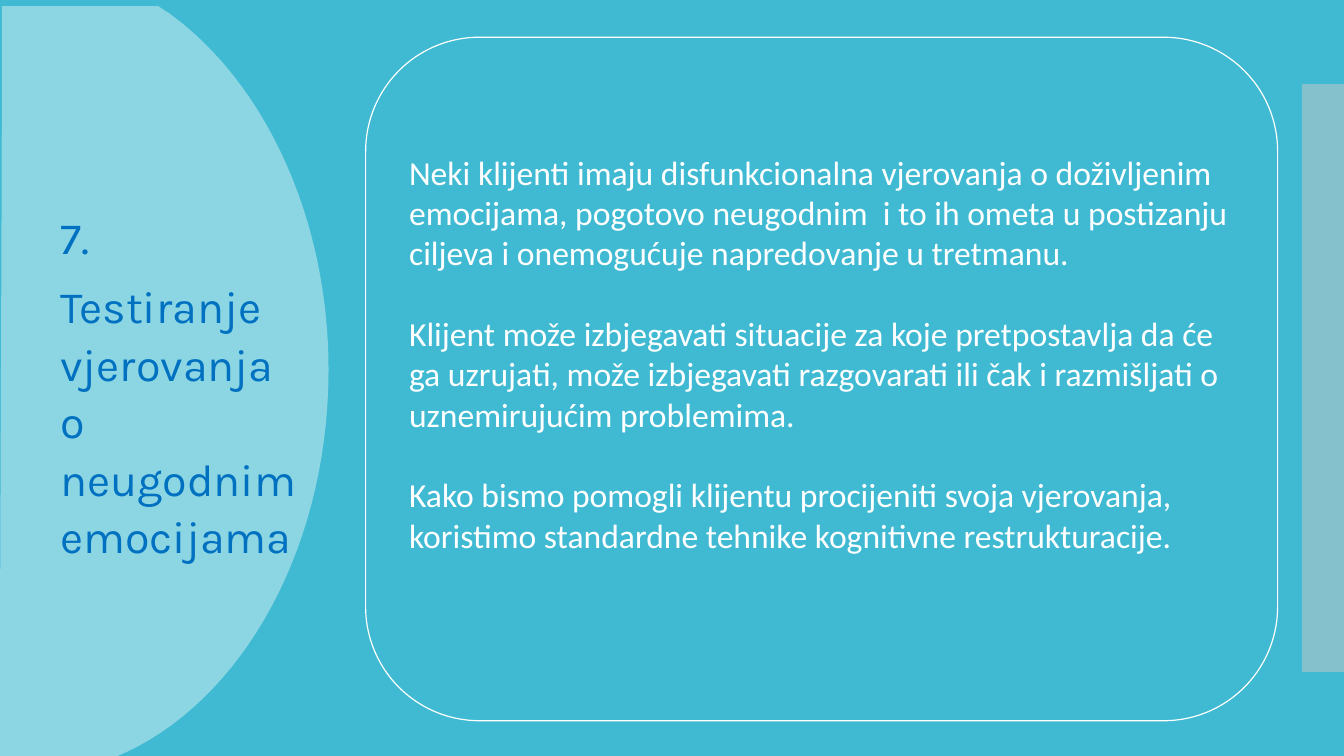
from pptx import Presentation
from pptx.dml.color import RGBColor
from pptx.enum.shapes import MSO_SHAPE
from pptx.enum.text import MSO_ANCHOR, MSO_AUTO_SIZE, PP_ALIGN
from pptx.oxml.ns import qn
from pptx.util import Pt
from lxml.etree import SubElement

TEAL = RGBColor(0x40, 0xBA, 0xD2)
PALE_TEAL = RGBColor(0x8C, 0xD6, 0xE4)
GREY = RGBColor(0xC8, 0xC8, 0xC8)
BLUE = RGBColor(0x00, 0x70, 0xC0)
WHITE = RGBColor(0xFF, 0xFF, 0xFF)

HEADING = ["7.", "Testiranje vjerovanja  o neugodnim emocijama"]
BELIEFS = [
    "Neki klijenti imaju disfunkcionalna vjerovanja o doživljenim emocijama, "
    "pogotovo neugodnim  i to ih ometa u postizanju ciljeva i onemogućuje "
    "napredovanje u tretmanu.",
    "Klijent može izbjegavati situacije za koje pretpostavlja da će ga uzrujati, "
    "može izbjegavati razgovarati ili čak i razmišljati o uznemirujućim problemima.",
    "Kako bismo pomogli klijentu procijeniti svoja vjerovanja, koristimo "
    "standardne tehnike kognitivne restrukturacije.",
]
CURVE_STEPS = 32


def curve(start, first_control, second_control, end):
    corners = (start, first_control, second_control, end)
    points = []
    for step in range(1, CURVE_STEPS + 1):
        t = step / CURVE_STEPS
        weights = ((1 - t) ** 3, 3 * t * (1 - t) ** 2, 3 * t ** 2 * (1 - t), t ** 3)
        points.append(tuple(sum(w * c[axis] for w, c in zip(weights, corners))
                            for axis in (0, 1)))
    return points


def paint(shape, color):
    shape.shadow.inherit = False
    shape.fill.solid()
    shape.fill.fore_color.rgb = color
    shape.line.fill.background()


def fill_placeholder(slide, placeholder, box, texts, font_name, size, color):
    placeholder.left, placeholder.top, placeholder.width, placeholder.height = map(Pt, box)
    slide.shapes._spTree.append(placeholder._element)
    frame = placeholder.text_frame
    frame.text = "\n".join(texts)
    frame.word_wrap = True
    frame.auto_size = MSO_AUTO_SIZE.NONE
    frame.vertical_anchor = MSO_ANCHOR.MIDDLE
    for paragraph in frame.paragraphs:
        paragraph.alignment = PP_ALIGN.LEFT
        paragraph.space_before = Pt(0)
        for run in paragraph.runs:
            run.font.name = font_name
            run.font.size = Pt(size)
            run.font.color.rgb = color
    return frame


def add_edge_strip(slide, left, top, width, height):
    strip = slide.shapes.add_shape(MSO_SHAPE.RECTANGLE, *map(Pt, (left, top, width, height)))
    paint(strip, GREY)
    tint = strip.fill._xPr.find(qn("a:solidFill"))[0]
    SubElement(tint, qn("a:alpha"), val="50000")


def add_heading_panel(slide, left, top, width, height):
    foot, tip, shoulder = (72.7, height - 0.7), (width, 259.9), (121.7, 5.8)
    outline = [(1.4, 0)]
    outline += curve((1.4, 0), (1.4, 180.7), (0, 359.3), (0, height - 0.7))
    outline += [(70.6, height), foot]
    outline += curve(foot, (165.6, 508.3), (width, 394.6), tip)
    outline += curve(tip, (width, 150.5), (188.6, 54.7), shoulder)
    points = [(Pt(left + x), Pt(top + y)) for x, y in outline]
    builder = slide.shapes.build_freeform(Pt(left + 113), Pt(top))
    builder.add_line_segments(points, close=True)
    paint(builder.convert_to_shape(), PALE_TEAL)

    heading = fill_placeholder(slide, slide.shapes.title, (left, top, width, height),
                               HEADING, "Karla", 32, BLUE)
    heading.margin_left = Pt(43.2)
    for paragraph in heading.paragraphs:
        paragraph.line_spacing = 1.07
        paragraph.space_after = Pt(8)


def add_beliefs_panel(slide, left, top, width, height):
    panel = slide.shapes.add_shape(MSO_SHAPE.ROUNDED_RECTANGLE,
                                   *map(Pt, (left, top, width, height)))
    paint(panel, TEAL)
    panel.line.color.rgb = WHITE
    panel.line.width = Pt(0.85)

    inset = 23.8
    text_box = (left + inset, top + inset, width - 2 * inset, height - 2 * inset)
    beliefs = fill_placeholder(slide, slide.placeholders[1], text_box,
                               BELIEFS, "Calibri", 24, WHITE)
    beliefs.margin_left = beliefs.margin_right = beliefs.margin_top = Pt(7.2)
    beliefs.margin_bottom = Pt(44)
    for index, paragraph in enumerate(beliefs.paragraphs):
        paragraph.line_spacing = Pt(28.8)
        paragraph.space_before = Pt(28.8 if index else 0)
        properties = paragraph._p.get_or_add_pPr()
        properties.set("marL", "0")
        properties.set("indent", "0")
        SubElement(properties, qn("a:buNone"))


def main():
    presentation = Presentation()
    presentation.slide_width, presentation.slide_height = Pt(960), Pt(540)
    slide = presentation.slides.add_slide(presentation.slide_layouts[1])
    slide.background.fill.solid()
    slide.background.fill.fore_color.rgb = TEAL
    add_edge_strip(slide, 930, 60, 30, 420)
    add_heading_panel(slide, 0, 4.3, 234.7, 540.7)
    add_beliefs_panel(slide, 261.2, 26.6, 651.4, 488.2)
    presentation.save("out.pptx")


if __name__ == "__main__":
    main()
